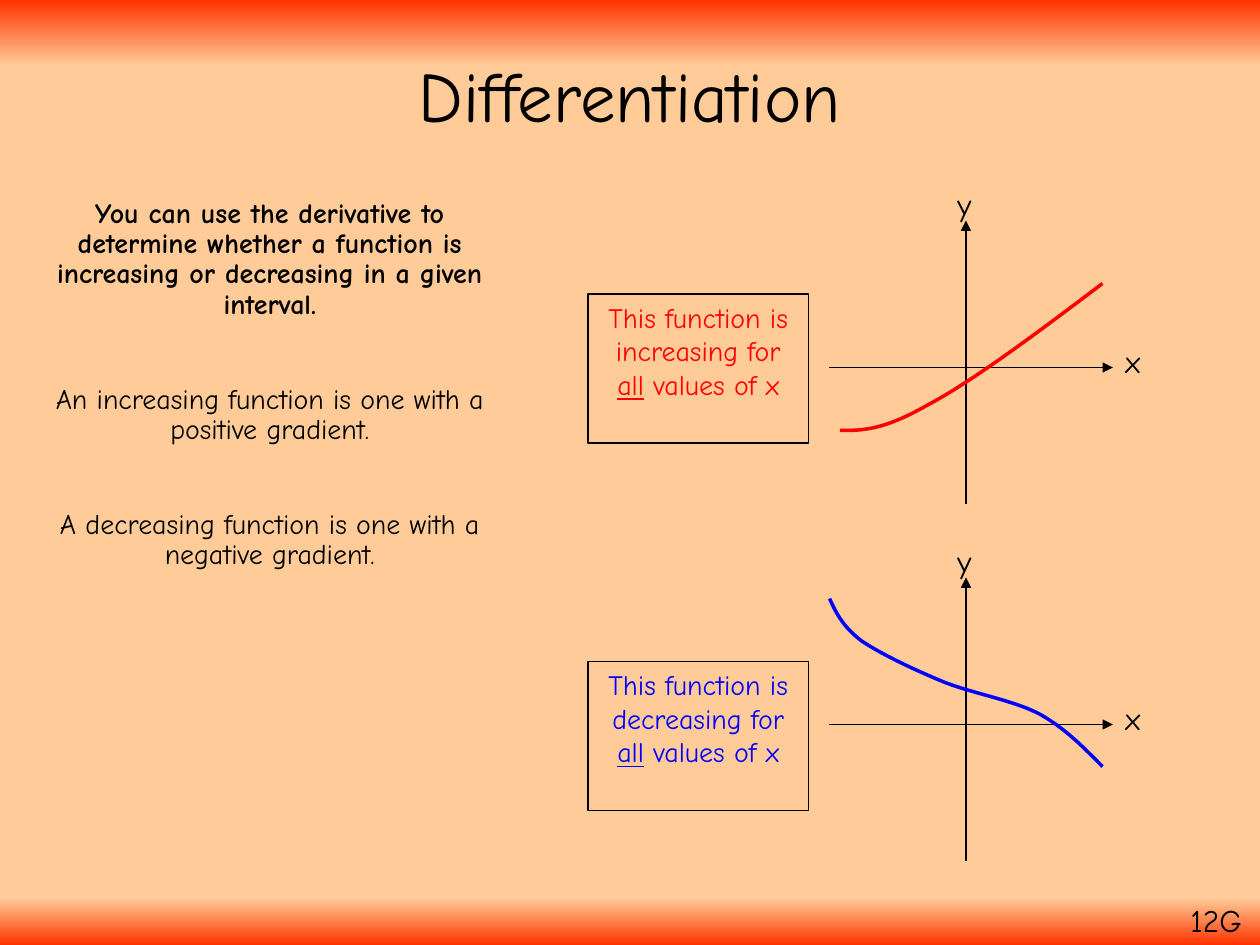
from copy import deepcopy

from lxml import etree
from pptx import Presentation
from pptx import util as u
from pptx.dml.color import RGBColor
from pptx.enum import shapes, text
from pptx.oxml.ns import qn

COLS, ROWS = 120, 90
WIDTH, HEIGHT = u.Inches(10), u.Inches(7.5)
FONT = "Comic Neue"
COLORS = {"ink": "000000", "edge": "FF3300", "page": "FFCC99",
          "up": "FF0000", "down": "0000FF"}
UP_CURVE = [(80, 41), (82.1, 41), (84.1, 41), (88.3, 38.6),
            (92.5, 36.4), (98.8, 31.7), (105, 27)]
DOWN_CURVE = [(79, 57), (79.6, 58.3), (80.2, 59.6), (82, 61), (83.9, 62.3),
              (87.1, 63.8), (90, 65), (92.9, 66.1), (96.5, 66.7), (99, 68),
              (101.5, 69.4), (103.2, 71.2), (105, 73)]


def rgb(name):
    """Return the named colour."""
    return RGBColor.from_string(COLORS[name])


def cells(*lengths):
    """Turn alternating column and row counts into lengths."""
    units = (WIDTH / COLS, HEIGHT / ROWS)
    return [u.Emu(round(n * units[i % 2])) for i, n in enumerate(lengths)]


def paint_background(s):
    """Fill the slide with a vertical gradient that is darker at both edges."""
    fill = s.background.fill
    fill.gradient()
    fill.gradient_angle = 270
    first, last = fill.gradient_stops
    first.color.rgb = last.color.rgb = rgb("edge")
    first.position, last.position = 0, 1
    stops = s.background._cSld.find(".//" + qn("a:gsLst"))
    for place in (1, 2):
        stops.insert(place, deepcopy(stops[0]))
    for stop, position in zip(list(fill.gradient_stops)[1:3], (0.07, 0.95)):
        stop.color.rgb = rgb("page")
        stop.position = position


def style_run(r, size, color, bold=False):
    """Apply the slide's font to a run."""
    r.font.name, r.font.size, r.font.bold = FONT, u.Pt(size), bold
    r.font.color.rgb = rgb(color)


def add_text(s, box, lines, size, align=text.PP_ALIGN.LEFT, spacing=1.0,
             gap=0, wrap=True, anchor=text.MSO_ANCHOR.TOP):
    """Add a text box with one paragraph for each line."""
    tf = s.shapes.add_textbox(*cells(*box)).text_frame
    tf.word_wrap, tf.vertical_anchor = wrap, anchor
    tf.text = "\n".join(lines)
    for i, p in enumerate(tf.paragraphs):
        p.alignment, p.line_spacing = align, spacing
        if i:
            p.space_before = u.Pt(gap)
        for r in p.runs:
            style_run(r, size, "ink")
    return tf


def add_axis(s, *ends):
    """Add an axis with an arrowhead at its far end."""
    sp = s.shapes.add_connector(shapes.MSO_CONNECTOR.STRAIGHT, *cells(*ends))
    sp.line.color.rgb, sp.line.width = rgb("ink"), u.Pt(0.75)
    etree.SubElement(sp.line._get_or_add_ln(), qn("a:tailEnd"), type="triangle")
    etree.SubElement(sp._element.spPr, qn("a:effectLst"))


def add_axes(s, row):
    """Add a labelled pair of axes whose top is at the row."""
    add_axis(s, 92, row + 27, 92, row)
    add_axis(s, 79, row + 14, 106, row + 14)
    add_text(s, (106, row + 11, 4, 4.8), ["x"], 18)
    add_text(s, (90, row - 4, 4, 4.8), ["y"], 18)


def add_curve(s, points, color):
    """Add a smooth curve from a start and triples of Bezier points."""
    start, *rest = [cells(*point) for point in points]
    builder = s.shapes.build_freeform(*start, scale=1.0)
    builder.add_line_segments(rest, close=False)
    sp = builder.convert_to_shape()
    sp.shadow.inherit = False
    sp.fill.background()
    sp.line.color.rgb, sp.line.width = rgb(color), u.Pt(2)
    path = sp._element.find(".//" + qn("a:path"))
    segments = path.findall(qn("a:lnTo"))
    for i in range(0, len(segments), 3):
        bezier = etree.SubElement(path, qn("a:cubicBezTo"))
        for segment in segments[i:i + 3]:
            bezier.append(segment[0])
            path.remove(segment)


def add_note(s, row, trend, color):
    """Add a framed note on how the function behaves."""
    sp = s.shapes.add_shape(shapes.MSO_SHAPE.RECTANGLE, *cells(56, row, 21, 14.2))
    sp.shadow.inherit = False
    sp.fill.background()
    sp.line.color.rgb, sp.line.width = rgb("ink"), u.Pt(0.75)
    tf = sp.text_frame
    tf.word_wrap, tf.vertical_anchor = True, text.MSO_ANCHOR.TOP
    p = tf.paragraphs[0]
    p.alignment = text.PP_ALIGN.CENTER
    for words in (f"This function is {trend} for ", "all", " values of x"):
        r = p.add_run()
        r.text = words
        style_run(r, 16, color)
        r.font.underline = words == "all"


def main():
    """Build the slide and save it."""
    prs = Presentation()
    prs.slide_width, prs.slide_height = WIDTH, HEIGHT
    s = prs.slides.add_slide(prs.slide_layouts[6])
    paint_background(s)
    center = text.PP_ALIGN.CENTER
    add_text(s, (8.3, 2.9, 103.4, 13.1), ["Differentiation"], 40.5, center, 0.9,
             anchor=text.MSO_ANCHOR.MIDDLE)
    body = add_text(s, (1.9, 18.4, 47.6, 62.6), [
        "You can use the derivative to determine whether a function is "
        "increasing or decreasing in a given interval.",
        "An increasing function is one with a positive gradient.",
        "A decreasing function is one with a negative gradient.",
    ], 16, center, 0.9, gap=37)
    body.paragraphs[0].runs[0].font.bold = True
    add_text(s, (112.2, 85.2, 7.7, 4.8), ["12G"], 18, wrap=False)
    for row in (21, 55):
        add_axes(s, row)
    add_curve(s, UP_CURVE, "up")
    add_curve(s, DOWN_CURVE, "down")
    add_note(s, 28, "increasing", "up")
    add_note(s, 63, "decreasing", "down")
    prs.save("out.pptx")


if __name__ == "__main__":
    main()
